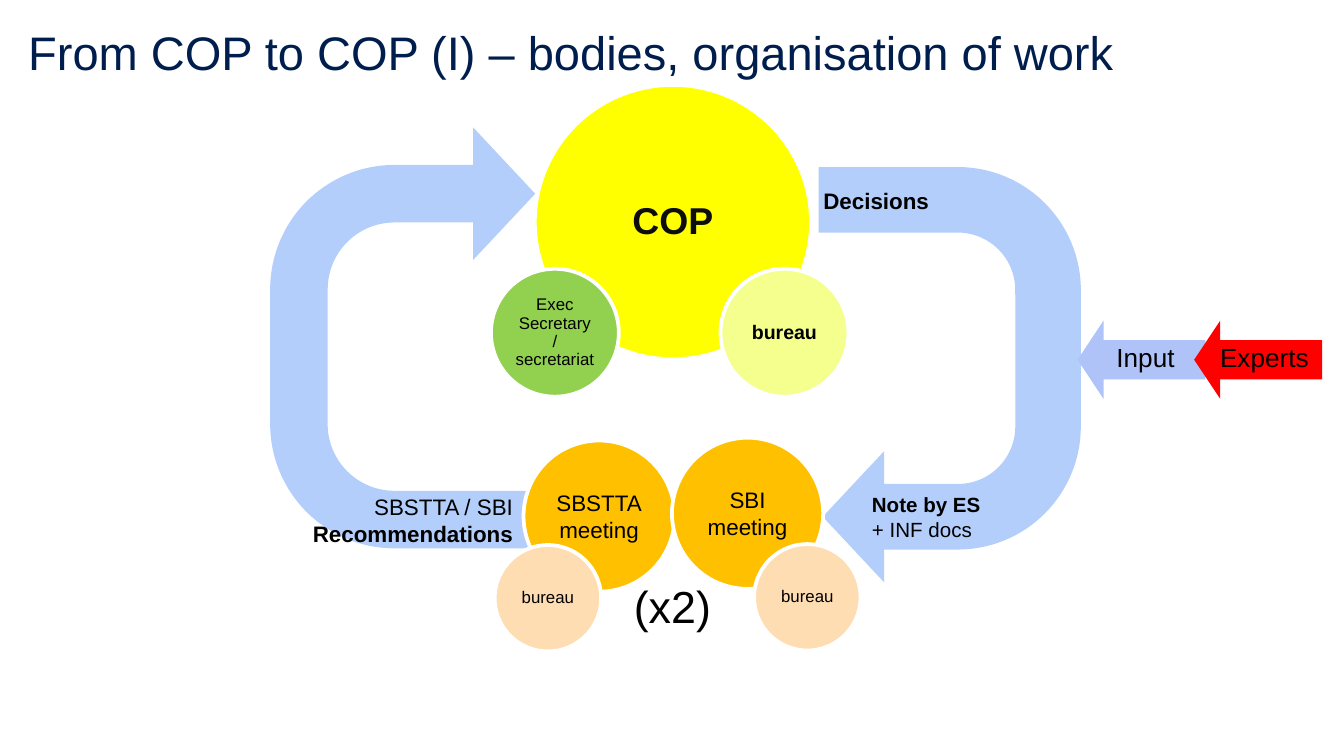
from dataclasses import dataclass

from pptx import Presentation
from pptx.dml.color import RGBColor
from pptx.enum.shapes import MSO_SHAPE
from pptx.enum.text import MSO_ANCHOR, PP_ALIGN
from pptx.util import Pt

OVAL, UTURN, DOWN = MSO_SHAPE.OVAL, MSO_SHAPE.U_TURN_ARROW, MSO_SHAPE.DOWN_ARROW
LEFT, CENTER, RIGHT = PP_ALIGN.LEFT, PP_ALIGN.CENTER, PP_ALIGN.RIGHT
TOP, MIDDLE, BOTTOM = MSO_ANCHOR.TOP, MSO_ANCHOR.MIDDLE, MSO_ANCHOR.BOTTOM
FONT = "Arial"
BLACK, WHITE, LOOP = "000000", "FFFFFF", "B3CEFB"


@dataclass
class Line:
    text: str
    size: float
    bold: bool = False
    color: str = BLACK


@dataclass
class Circle:
    x: float
    y: float
    w: float
    h: float
    fill: str
    lines: list[Line]
    spacing: float = 0.9


@dataclass
class Arrow:
    kind: int
    x: float
    y: float
    w: float
    h: float
    rotation: float
    fill: str
    adjust: tuple[float, ...]


@dataclass
class Label:
    x: float
    y: float
    w: float
    h: float
    lines: list[Line]
    align: int = LEFT
    wrap: bool = True
    anchor: int = TOP


def rgb(value: str) -> RGBColor:
    return RGBColor.from_string(value)


def write(tf, lines: list[Line], align: int, spacing: float = 1.0, **frame) -> None:
    for name, value in frame.items():
        setattr(tf, name, value)
    for i, line in enumerate(lines):
        p = tf.paragraphs[0] if i == 0 else tf.add_paragraph()
        p.alignment, p.line_spacing = align, spacing
        r = p.add_run()
        r.text = line.text
        formats = {"name": FONT, "size": Pt(line.size), "bold": line.bold}
        for name, value in formats.items():
            setattr(r.font, name, value)
        r.font.color.rgb = rgb(line.color)


def add_filled(s, kind: int, item: Circle | Arrow):
    sp = s.shapes.add_shape(kind, Pt(item.x), Pt(item.y), Pt(item.w), Pt(item.h))
    sp.shadow.inherit = False
    sp.fill.solid()
    sp.fill.fore_color.rgb = rgb(item.fill)
    return sp


def add_circle(s, circle: Circle) -> None:
    sp = add_filled(s, OVAL, circle)
    sp.line.color.rgb = rgb(WHITE)
    sp.line.width = Pt(2)
    inset = Pt(2.7)
    write(sp.text_frame, circle.lines, CENTER, circle.spacing, word_wrap=True,
          vertical_anchor=MIDDLE, margin_left=inset, margin_right=inset,
          margin_top=inset, margin_bottom=inset)


def add_arrow(s, arrow: Arrow) -> None:
    sp = add_filled(s, arrow.kind, arrow)
    sp.line.fill.background()
    sp.rotation = arrow.rotation
    for i, value in enumerate(arrow.adjust):
        sp.adjustments[i] = value


def add_label(s, label: Label, **frame) -> None:
    sp = s.shapes.add_textbox(Pt(label.x), Pt(label.y), Pt(label.w), Pt(label.h))
    write(sp.text_frame, label.lines, label.align, word_wrap=label.wrap,
          vertical_anchor=label.anchor, **frame)


TITLE = Label(8, 4.5, 671, 45.5, [
    Line("From COP to COP (I) – bodies, organisation of work", 25.2, color="001E4D"),
], anchor=BOTTOM)

COP_CIRCLES = [
    Circle(286.5, 45.5, 148, 147, "FFFF00", [Line("COP", 20, True, "0D0D0D")]),
    Circle(386, 144, 68.5, 68.5, "F5FF8D", [Line("bureau", 10.5, True)]),
    Circle(263, 144, 68.5, 68.5, "92D050", [Line("Exec Secretary / secretariat", 9)]),
]
LOOP_ARROWS = [
    Arrow(UTURN, 103, 110, 225.5, 142, 270, LOOP, (0.217, 0.25, 0.234, 0.469, 1)),
    Arrow(UTURN, 397.5, 130.5, 222.5, 140.5, 90, LOOP, (0.25, 0.25, 0.234, 0.469, 0.984)),
]
LOOP_LABELS = [
    Label(141, 260.5, 141, 36,
          [Line("SBSTTA / SBI", 12), Line("Recommendations", 12, True)], RIGHT),
    Label(460, 260, 131, 34, [Line("Note by ES", 11, True), Line("+ INF docs", 11)]),
    Label(434, 96.5, 141, 21.5, [Line("Decisions", 12, True)]),
]
MEETING_CIRCLES = [
    Circle(x, y, 81, 81, "FFC000", [Line(body, 12), Line("meeting", 12)], 1.0)
    for x, y, body in ((280.5, 236, "SBSTTA"), (360, 234.5, "SBI"))
] + [
    Circle(x, y, 57, 57, "FFDDB3", [Line("bureau", 9)])
    for x, y in ((404, 291.5), (265, 292))
]
TIMES = Label(332.5, 306.5, 57.5, 36, [Line("(x2)", 24)], wrap=False)
INPUT_ARROWS = [
    Arrow(DOWN, x, 158.5, 42, 68.5, 90, fill, (0.5, 0.332))
    for x, fill in ((590.5, "B0C3F9"), (653, "FF0000"))
]
INPUT_LABELS = [
    Label(x, 179.5, w, 24.5, [Line(text, 14)], wrap=False)
    for x, w, text in ((646.5, 62.5, "Experts"), (591, 46, "Input"))
]


def main() -> None:
    prs = Presentation()
    prs.slide_width, prs.slide_height = Pt(720), Pt(405)
    s = prs.slides.add_slide(prs.slide_layouts[6])

    # Title
    add_label(s, TITLE, margin_top=Pt(7.2), margin_bottom=Pt(7.2))

    # COP with its secretariat and bureau
    for circle in COP_CIRCLES:
        add_circle(s, circle)

    # Loop between COP and the subsidiary bodies
    for arrow in LOOP_ARROWS:
        add_arrow(s, arrow)
    for label in LOOP_LABELS:
        add_label(s, label)

    # Subsidiary body meetings
    for circle in MEETING_CIRCLES:
        add_circle(s, circle)
    add_label(s, TIMES)

    # Expert input
    for arrow in INPUT_ARROWS:
        add_arrow(s, arrow)
    for label in INPUT_LABELS:
        add_label(s, label)

    prs.save("out.pptx")


if __name__ == "__main__":
    main()
